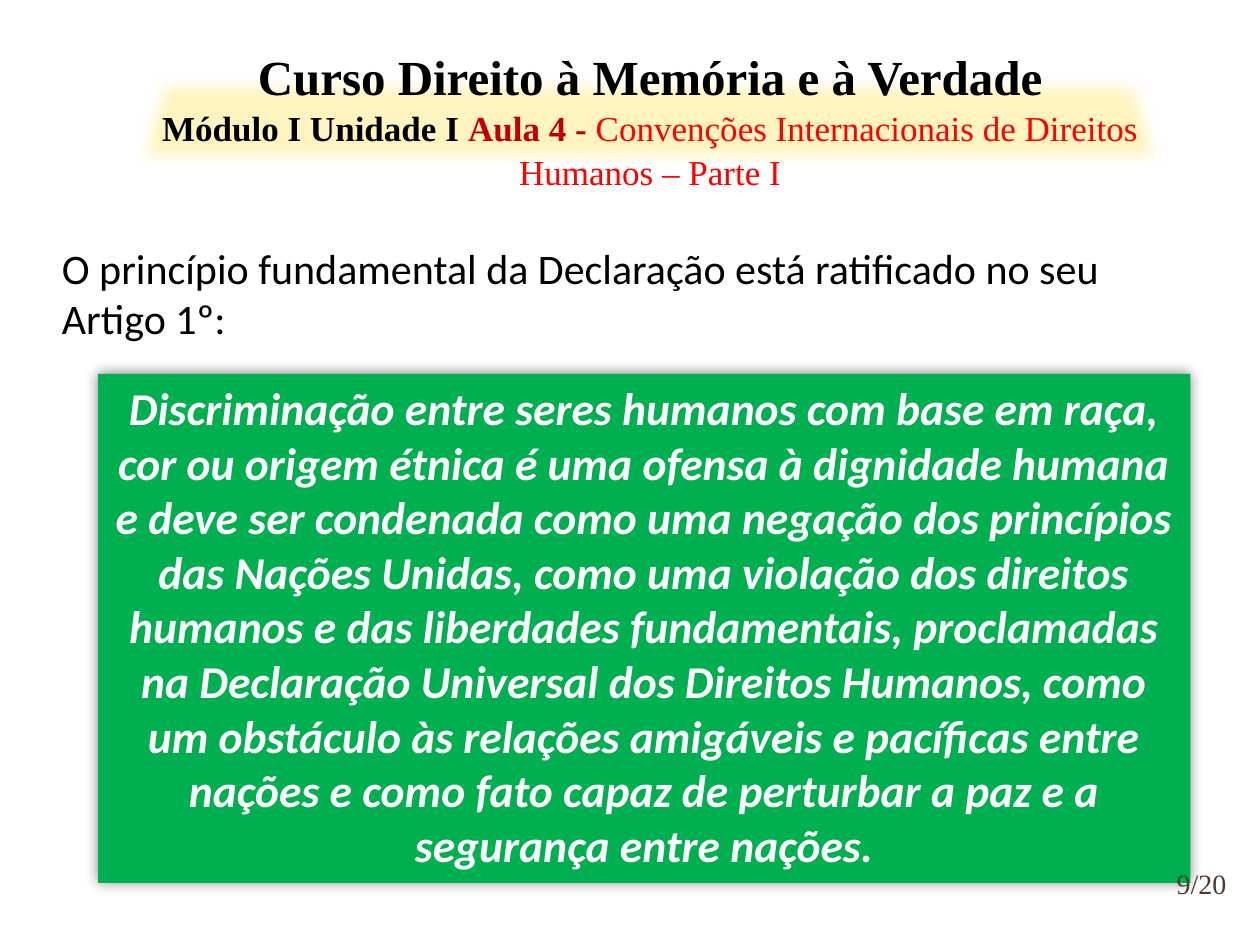
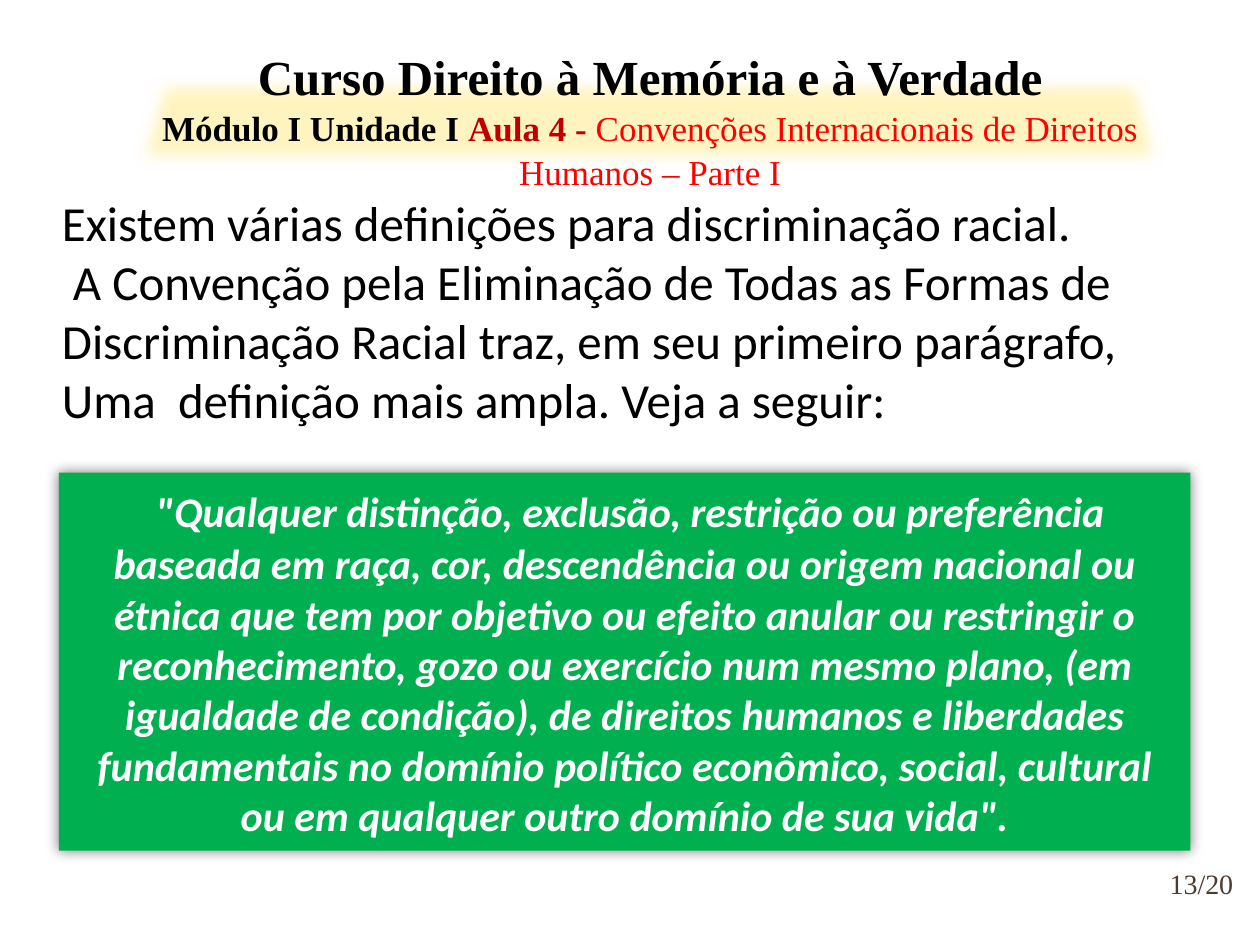
from lxml import etree
from pptx import Presentation
from pptx.dml.color import RGBColor
from pptx.enum.shapes import MSO_SHAPE
from pptx.enum.text import MSO_ANCHOR, PP_ALIGN
from pptx.oxml.ns import qn
from pptx.util import Cm, Pt

RECTANGLE, TRAPEZOID = MSO_SHAPE.RECTANGLE, MSO_SHAPE.TRAPEZOID
TOP, MIDDLE = MSO_ANCHOR.TOP, MSO_ANCHOR.MIDDLE
LEFT, CENTER, JUSTIFY = PP_ALIGN.LEFT, PP_ALIGN.CENTER, PP_ALIGN.JUSTIFY

# Shared formats
BLACK, WHITE, GREEN, GLOW = "000000", "FFFFFF", "00B050", "FFF4BF"
HEADING = {"name": "Times New Roman", "size": Pt(20), "bold": True, "color": BLACK}
BODY = {"name": "Calibri", "size": Pt(24), "bold": False, "color": BLACK}
QUOTE = BODY | {"bold": True, "italic": True, "color": WHITE}
NUMBER = HEADING | {"size": Pt(16), "bold": False, "color": "4E3B30"}

# Content: each paragraph is a list of (text, format) spans
TITLE = [
    [("Curso Direito à Memória e à Verdade", HEADING | {"size": Pt(28)})],
    [("Módulo I Unidade I ", HEADING),
     ("Aula 4 - ", HEADING | {"color": "C00000"}),
     ("Convenções Internacionais de Direitos Humanos – Parte I",
      HEADING | {"bold": False, "color": "FF0000"})],
]
LARGE = BODY | {"size": Pt(28)}
PAGES = [
    {
        "intro": [[("O princípio fundamental da Declaração está ratificado no seu "
                    "Artigo 1º:", BODY)]],
        "intro_area": (1, 4.75, 23, 2.31), "intro_align": LEFT, "intro_anchor": MIDDLE,
        "quote": [[("Discriminação entre seres humanos com base em raça, cor ou origem "
                    "étnica é uma ofensa à dignidade humana e deve ser condenada como "
                    "uma negação dos princípios das Nações Unidas, como uma violação "
                    "dos direitos humanos e das liberdades fundamentais, proclamadas "
                    "na Declaração Universal dos Direitos Humanos, como um obstáculo "
                    "às relações amigáveis e pacíficas entre nações e como fato capaz "
                    "de perturbar a paz e a segurança entre nações.",
                    QUOTE | {"size": Pt(26)})]],
        "quote_area": (1.98, 7.54, 22.02, 10.26),
        "number": "9/20",
    },
    {
        "intro": [[(line, LARGE)] for line in (
            "Existem várias definições para discriminação racial.",
            " A Convenção pela Eliminação de Todas as Formas de ",
            "Discriminação Racial traz, em seu primeiro parágrafo, ",
            "Uma  definição mais ampla. Veja a seguir:")],
        "intro_area": (1, 3.76, 22.8, 5.05), "intro_align": JUSTIFY, "intro_anchor": TOP,
        "quote": [[(" ", LARGE | {"color": WHITE}),
                   ('"Qualquer distinção, exclusão, restrição ou preferência baseada '
                    "em raça, cor, descendência ou origem nacional ou étnica que tem "
                    "por objetivo ou efeito anular ou restringir o reconhecimento, "
                    "gozo ou exercício num mesmo plano, (em igualdade de condição), "
                    "de direitos humanos e liberdades fundamentais no domínio político "
                    "econômico, social, cultural ou em qualquer outro domínio de sua "
                    'vida".', QUOTE)]],
        "quote_area": (1.19, 9.53, 22.81, 7.62),
        "number": "13/20",
    },
]
TITLE_AREA = (2.59, 0.79, 21.03, 3.18)
GLOW_AREA = (2.54, 1.5, 21.1, 1.9)
NUMBER_AREA = (23.37, 17.17, 1.7, 1.27)


def rgb(color):
    return RGBColor.from_string(color)


def place(area):
    return [Cm(length) for length in area]


def write(box, paragraphs, align, anchor, spacing=1.0):
    frame = box.text_frame
    frame.word_wrap = True
    frame.vertical_anchor = anchor
    for index, spans in enumerate(paragraphs):
        para = frame.add_paragraph() if index else frame.paragraphs[0]
        para.alignment = align
        para.line_spacing = spacing
        for text, style in spans:
            span = para.add_run()
            span.text = text
            for key, value in style.items():
                if key == "color":
                    span.font.color.rgb = rgb(value)
                else:
                    setattr(span.font, key, value)


def add_effect(shape, name, **attributes):
    effects = shape._element.spPr.get_or_add_effectLst() if hasattr(
        shape._element.spPr, "get_or_add_effectLst") else shape._element.spPr.find(qn("a:effectLst"))
    return etree.SubElement(effects, qn(name), attributes)


def add_panel(page, kind, area, color):
    panel = page.shapes.add_shape(kind, *place(area))
    panel.shadow.inherit = False
    panel.fill.solid()
    panel.fill.fore_color.rgb = rgb(color)
    panel.line.fill.background()
    return panel


def add_title(page):
    # Soft glow behind the heading
    glow = add_panel(page, TRAPEZOID, GLOW_AREA, GLOW)
    glow.adjustments[0] = 0.28
    add_effect(glow, "a:softEdge", rad=str(Cm(0.3)))
    page.shapes._spTree.insert(2, glow._element)
    title = page.shapes.title
    title.left, title.top, title.width, title.height = place(TITLE_AREA)
    write(title, TITLE, CENTER, MIDDLE, 1.04)


def add_quote(page, content):
    panel = add_panel(page, RECTANGLE, content["quote_area"], GREEN)
    shadow = add_effect(panel, "a:outerShdw", blurRad=str(Pt(7.5)), dist="0",
                        algn="ctr", rotWithShape="0")
    tint = etree.SubElement(shadow, qn("a:srgbClr"), val=BLACK)
    etree.SubElement(tint, qn("a:alpha"), val="50000")
    write(panel, content["quote"], CENTER, TOP)


def add_text(page, area, paragraphs, align, anchor):
    box = page.shapes.add_textbox(*place(area))
    write(box, paragraphs, align, anchor)
    return box


def add_number(page, number):
    box = add_text(page, NUMBER_AREA, [[(number, NUMBER)]], CENTER, MIDDLE)
    for side in ("left", "top", "right", "bottom"):
        setattr(box.text_frame, f"margin_{side}", 0)


def main():
    deck = Presentation()
    deck.slide_width, deck.slide_height = Cm(25.4), Cm(19.05)
    for content in PAGES:
        page = deck.slides.add_slide(deck.slide_layouts[5])
        add_title(page)
        add_quote(page, content)
        add_text(page, content["intro_area"], content["intro"],
                 content["intro_align"], content["intro_anchor"])
        add_number(page, content["number"])
    deck.save("out.pptx")


if __name__ == "__main__":
    main()
